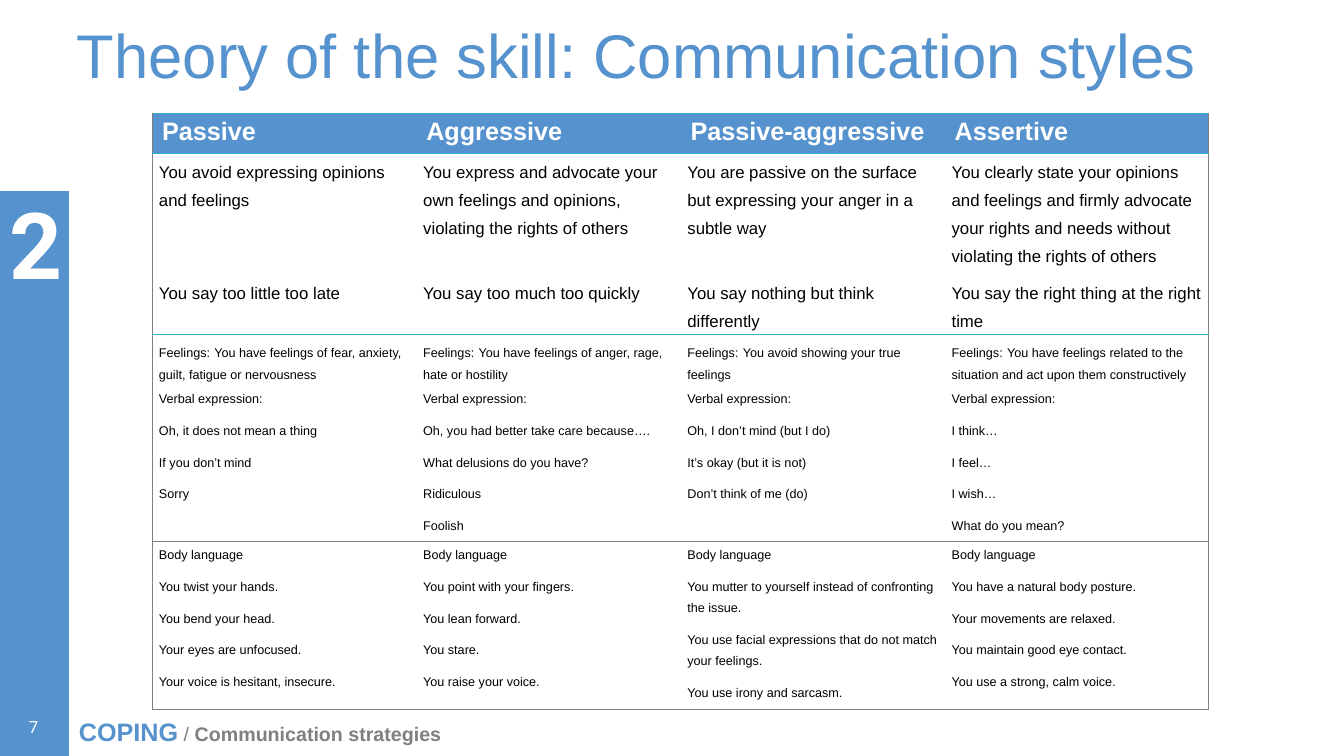
from dataclasses import dataclass

from lxml.etree import SubElement
from pptx import Presentation
from pptx.dml.color import RGBColor as Rgb
from pptx.enum.shapes import MSO_SHAPE as Shape
from pptx.enum.text import MSO_ANCHOR as Anchor
from pptx.oxml.ns import qn
from pptx.util import Emu, Pt

SCALE = 914400 / 100.8


@dataclass(frozen=True)
class Theme:
    """Hold the colours, fonts and type sizes."""
    blue: str = "5592CE"
    teal: str = "36AFCE"
    gray: str = "7F7F7F"
    white: str = "FFFFFF"
    black: str = "000000"
    sans: str = "Arial"
    side: str = "Roboto"
    title: int = 44
    digit: int = 66
    head: int = 18
    foot: int = 14
    body: int = 12
    gap: int = 11
    note: int = 9


T = Theme()
HEADS = ["Passive", "Aggressive", "Passive-aggressive", "Assertive"]
VIEWS = [
    "You avoid expressing opinions and feelings",
    "You express and advocate your own feelings and opinions, violating the rights of others",
    "You are passive on the surface but expressing your anger in a subtle way",
    "You clearly state your opinions and feelings and firmly advocate your rights and needs "
    "without violating the rights of others",
]
WORDS = [
    "You say too little too late",
    "You say too much too quickly",
    "You say nothing but think differently",
    "You say the right thing at the right time",
]
MOODS = [
    "You have feelings of fear, anxiety, guilt, fatigue or nervousness",
    "You have feelings of anger, rage, hate or hostility",
    "You avoid showing your true feelings",
    "You have feelings related to the situation and act upon them constructively",
]
VERBAL = [
    ["Oh, it does not mean a thing", "If you don’t mind", "Sorry"],
    ["Oh, you had better take care because….", "What delusions do you have?",
     "Ridiculous", "Foolish"],
    ["Oh, I don’t mind (but I do)", "It’s okay (but it is not)", "Don’t think of me (do)"],
    ["I think…", "I feel…", "I wish…", "What do you mean?"],
]
POSES = [
    ["You twist your hands.", "You bend your head.", "Your eyes are unfocused.",
     "Your voice is hesitant, insecure."],
    ["You point with your fingers.", "You lean forward.", "You stare.",
     "You raise your voice."],
    ["You mutter to yourself instead of confronting the issue.",
     "You use facial expressions that do not match your feelings.",
     "You use irony and sarcasm."],
    ["You have a natural body posture.", "Your movements are relaxed.",
     "You maintain good eye contact.", "You use a strong, calm voice."],
]
ROWS = [36, 107, 52, 43, 142, 152]
RULES = [T.teal, T.teal, None, T.teal, None, T.gray, T.gray]


def px(num):
    """Turn px into EMU."""
    return Emu(round(num * SCALE))


def style(font, size, color, bold=False, face=T.sans):
    """Set the look of a font."""
    font.name, font.size, font.bold = face, Pt(size), bold
    font.color.rgb = Rgb.from_string(color)


def label(slide, box, text, size, color, bold=False, face=T.sans):
    """Add a text box with one paragraph and return its frame."""
    frame = slide.shapes.add_textbox(*map(px, box)).text_frame
    frame.word_wrap = True
    para = frame.paragraphs[0]
    para.text = text
    style(para.font, size, color, bold, face)
    return frame


def title(slide, box):
    """Add the slide title."""
    frame = label(slide, box, "Theory of the skill: Communication styles", T.title, T.blue)
    frame.vertical_anchor = Anchor.MIDDLE
    frame.paragraphs[0].line_spacing = 0.9


def side(slide, box):
    """Add the side bar with chapter and page numbers."""
    left, top, wide, high = box
    bar = slide.shapes.add_shape(Shape.RECTANGLE, *map(px, box))
    bar.shadow.inherit = False
    bar.fill.solid()
    bar.fill.fore_color.rgb = Rgb.from_string(T.blue)
    bar.line.fill.background()
    label(slide, (left, top - 9, wide + 28, 122), "2", T.digit, T.white, True, T.side)
    label(slide, (left + 19, top + high - 44, 51, 30), "7", T.body, T.white, face=T.side)


def footer(slide, box):
    """Add the course name and the topic."""
    para = label(slide, box, "", T.foot, T.gray).paragraphs[0]
    parts = [("COPING", T.head, T.blue, True), (" / ", T.foot, T.gray, False),
             ("Communication strategies", T.foot, T.gray, True)]
    for text, *look in parts:
        run = para.add_run()
        run.text = text
        style(run.font, *look)


def edge(cell, tag, color):
    """Draw one cell border, or none."""
    line = SubElement(cell._tc.get_or_add_tcPr(), qn(f"a:{tag}"), w=str(Pt(0.75)))
    if color:
        fill = SubElement(line, qn("a:solidFill"))
        SubElement(fill, qn("a:srgbClr"), val=color)
    else:
        SubElement(line, qn("a:noFill"))


def write(cell, lines, size):
    """Fill a body cell with spaced lines."""
    cell.margin_left = cell.margin_right = px(7)
    cell.margin_top = cell.margin_bottom = 0
    frame = cell.text_frame
    frame.text = "\n".join(lines)
    for num, para in enumerate(frame.paragraphs):
        para.line_spacing = 1.5
        if num:
            para.space_before = Pt(7.5)
        style(para.font, size, T.black)


def feel(cell, mood):
    """Fill a feelings cell with its wider gap."""
    write(cell, [""], T.note)
    para = cell.text_frame.paragraphs[0]
    for text, size in [("Feelings:", T.note), (" ", T.gap), (mood, T.note)]:
        run = para.add_run()
        run.text = text
        run.font.size = Pt(size)


def grid(slide, box):
    """Add the table of the four styles."""
    table = slide.shapes.add_table(len(ROWS), len(HEADS), *map(px, box)).table
    table.first_row = table.horz_banding = False
    for row, high in zip(table.rows, ROWS):
        row.height = px(high)
    last = len(HEADS) - 1
    for col, head in enumerate(HEADS):
        table.columns[col].width = px(box[2] / len(HEADS))
        cells = [table.cell(row, col) for row in range(len(ROWS))]
        for row, cell in enumerate(cells):
            edge(cell, "lnL", None if col else T.gray)
            edge(cell, "lnR", T.gray if col == last else None)
            edge(cell, "lnT", RULES[row])
            edge(cell, "lnB", RULES[row + 1])
            cell.fill.background()
        top, view, word, mood, verbal, pose = cells
        top.fill.solid()
        top.fill.fore_color.rgb = Rgb.from_string(T.blue)
        top.text = head
        style(top.text_frame.paragraphs[0].font, T.head, T.white, True)
        write(view, [VIEWS[col]], T.body)
        write(word, [WORDS[col]], T.body)
        feel(mood, MOODS[col])
        write(verbal, ["Verbal expression:", *VERBAL[col]], T.note)
        write(pose, ["Body language", *POSES[col]], T.note)


def main():
    """Build and save the slide."""
    deck = Presentation()
    deck.slide_width, deck.slide_height = px(1344), px(756)
    slide = deck.slides.add_slide(deck.slide_layouts[6])
    footer(slide, (69, 711, 731, 40))
    side(slide, (0, 191, 69, 565))
    title(slide, (67, 29, 1269, 59))
    grid(slide, (152, 113, 1057, 532))
    deck.save("out.pptx")


if __name__ == "__main__":
    main()
